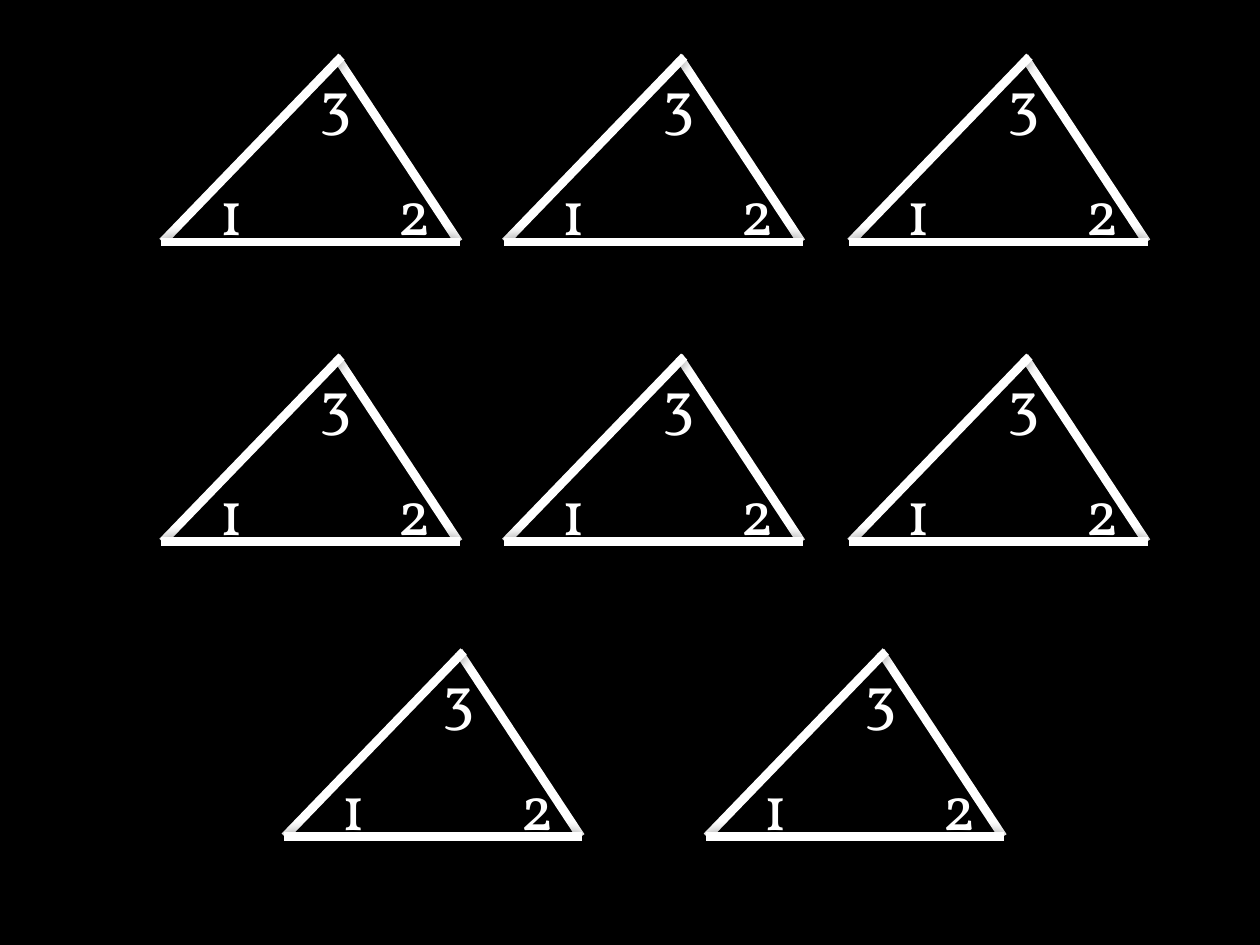
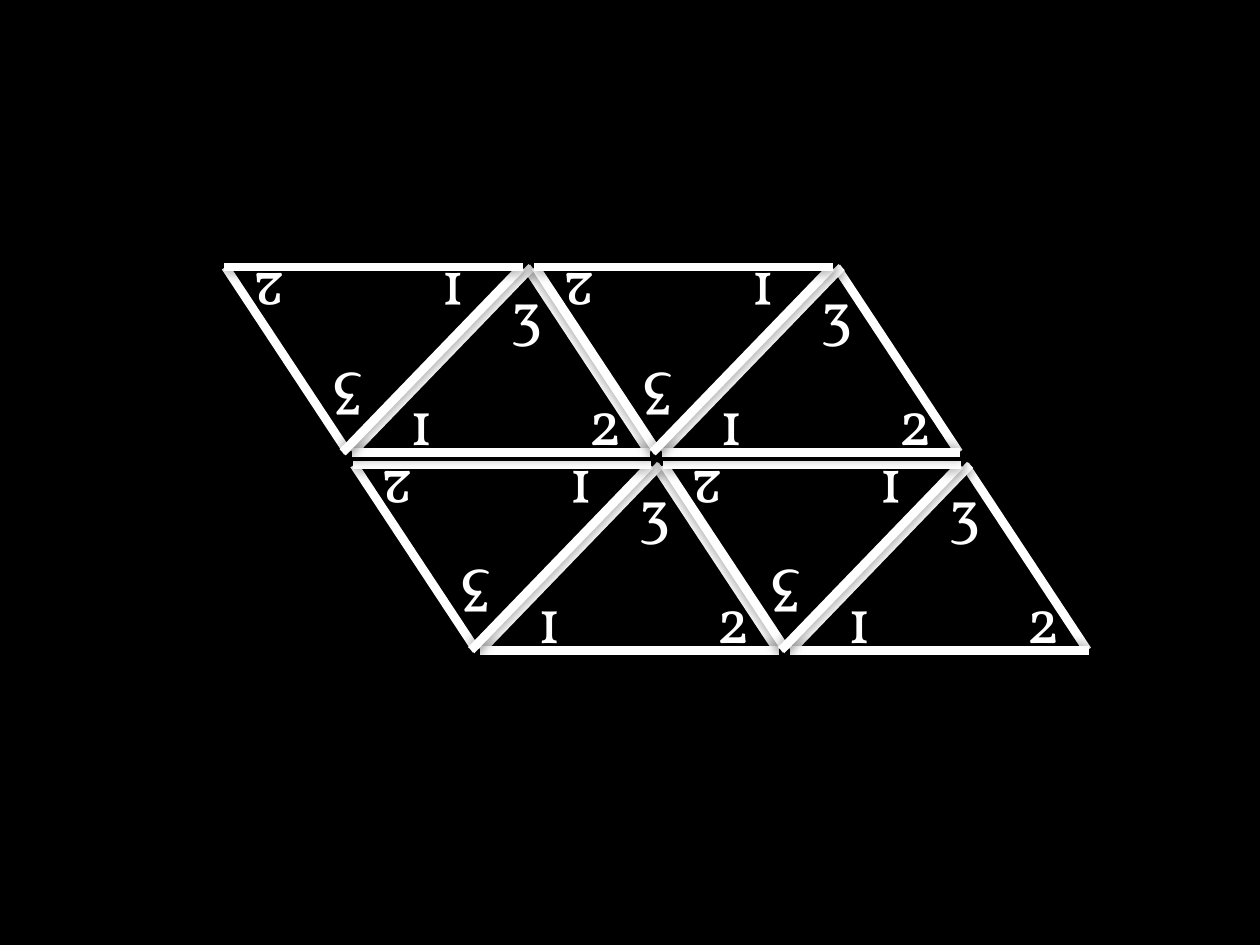
from lxml import etree
from pptx import Presentation
from pptx.dml.color import RGBColor
from pptx.enum.shapes import MSO_CONNECTOR
from pptx.enum.text import MSO_AUTO_SIZE, PP_ALIGN
from pptx.oxml.ns import qn
from pptx.util import Inches, Pt

STRAIGHT = MSO_CONNECTOR.STRAIGHT
CENTER = PP_ALIGN.CENTER
FIT = MSO_AUTO_SIZE.SHAPE_TO_FIT_TEXT

BLACK, WHITE = "000000", "FFFFFF"
FONT = "Vollkorn"
WIDE, HIGH = 2.37, 1.47
TEXT_HIGH = 0.71

# Sides and labels of an upright triangle, from the corner of its box
SIDES = [
    ((1.39, 0), (2.36, HIGH)),
    ((1.43, 0), (0.01, HIGH)),
    ((WIDE, HIGH), (0, HIGH)),
]
LABELS = [("1", 0.36, 0.87, 0.36), ("2", 1.78, 0.87, 0.45), ("3", 1.16, 0, 0.45)]


def color(code):
    return RGBColor.from_string(code)


def add_glow(line):
    """Give the line a soft, centred half-clear black shadow."""
    effects = etree.SubElement(line._element.spPr, qn("a:effectLst"))
    shadow = etree.SubElement(effects, qn("a:outerShdw"), blurRad=str(Pt(7.5)),
                              dist="0", dir="0", algn="ctr", rotWithShape="0")
    tint = etree.SubElement(shadow, qn("a:srgbClr"), val=BLACK)
    etree.SubElement(tint, qn("a:alpha"), val="50000")


def add_side(group, start, end):
    line = group.shapes.add_connector(
        STRAIGHT, *[Inches(v) for v in (*start, *end)])
    line.line.color.rgb = color(WHITE)
    line.line.width = Pt(5)
    add_glow(line)


def add_label(group, text, left, top, width, turned):
    box = group.shapes.add_textbox(
        *[Inches(v) for v in (left, top, width, TEXT_HIGH)])
    box.rotation = 180 if turned else 0
    frame = box.text_frame
    frame.word_wrap = False
    frame.auto_size = FIT
    para = frame.paragraphs[0]
    para.alignment = CENTER
    run = para.add_run()
    run.text = text
    run.font.name = FONT
    run.font.size = Pt(36)
    run.font.color.rgb = color(WHITE)


def add_triangle(group, left, top, turned=False):
    """Draw a labelled triangle; turned gives it a half turn in its box."""
    def place(x, y, width=0, height=0):
        if turned:
            x, y = WIDE - x - width, HIGH - y - height
        return left + x, top + y

    for start, end in SIDES:
        add_side(group, place(*start), place(*end))
    for text, x, y, width in LABELS:
        add_label(group, text, *place(x, y, width, TEXT_HIGH), width, turned)


def add_band(slide, left, top, pairs=2, shift=1.01, pitch=2.46):
    """Tile a row with pairs of an upright and a turned triangle."""
    group = slide.shapes.add_group_shape()
    for i in range(pairs):
        x = left + i * pitch
        add_triangle(group, x + shift, top)
        add_triangle(group, x, top, turned=True)


def add_slide(deck):
    slide = deck.slides.add_slide(deck.slide_layouts[6])
    fill = slide.background.fill
    fill.solid()
    fill.fore_color.rgb = color(BLACK)
    return slide


def build_loose(deck):
    slide = add_slide(deck)
    thirds = (1.28, 4, 6.74)
    rows = [(5.17, (2.25, 5.6)), (0.45, thirds), (2.83, thirds)]
    for top, lefts in rows:
        for left in lefts:
            add_triangle(slide.shapes.add_group_shape(), left, top)


def build_tiled(deck):
    slide = add_slide(deck)
    for left, top in [(2.8, 3.69), (1.78, 2.12)]:
        add_band(slide, left, top)


def main():
    deck = Presentation()
    deck.slide_width, deck.slide_height = Inches(10), Inches(7.5)
    build_loose(deck)
    build_tiled(deck)
    deck.save("out.pptx")


if __name__ == "__main__":
    main()
